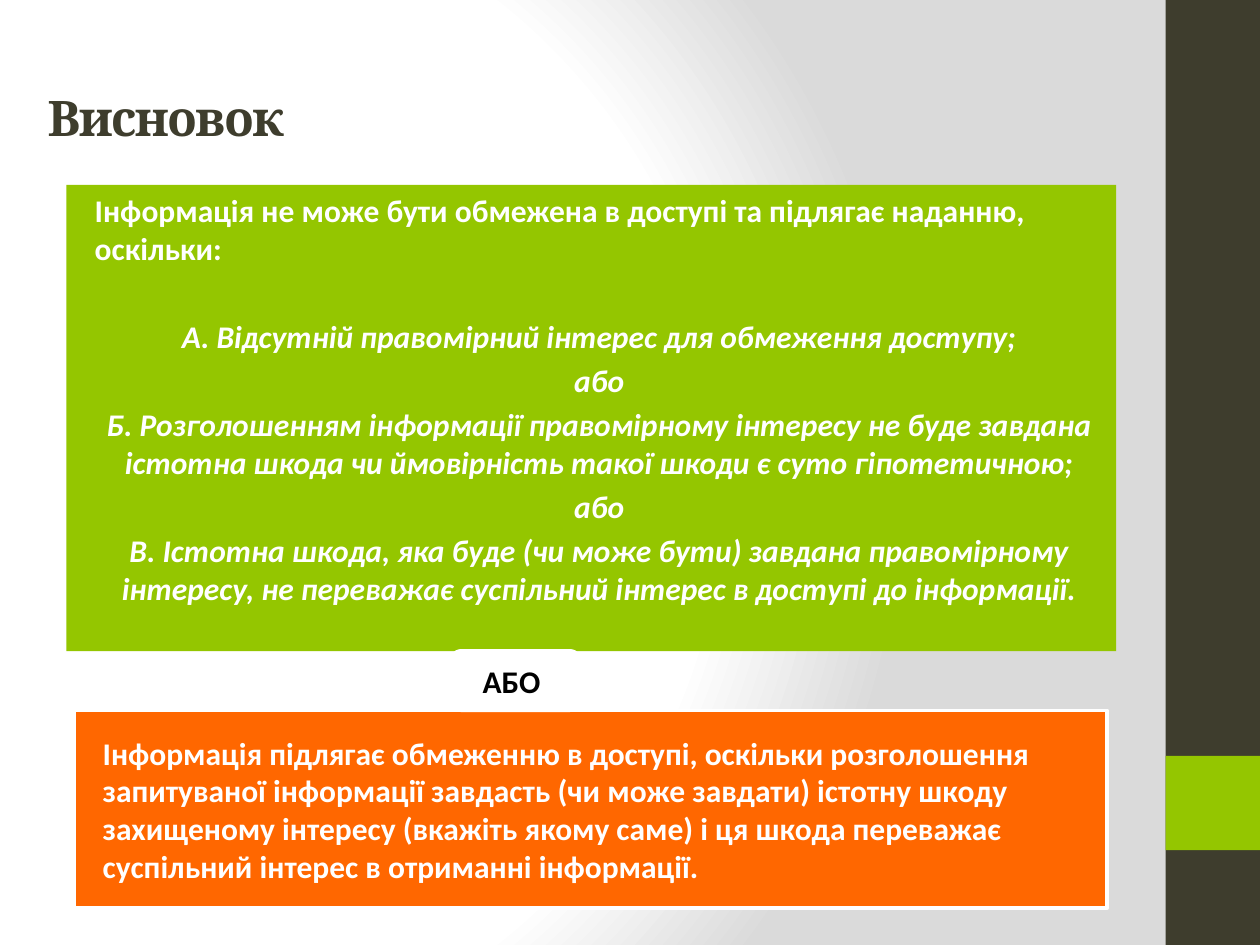
"""Build the conclusion slide on restricting access to information."""
import pptx
import pptx.dml.color
import pptx.enum.shapes
import pptx.enum.text
import pptx.oxml
import pptx.util

Cm = pptx.util.Cm
ALIGN = pptx.enum.text.PP_ALIGN
ANCHOR = pptx.enum.text.MSO_ANCHOR
SHAPE = pptx.enum.shapes.MSO_SHAPE
DARK, GREEN, ORANGE, WHITE, BLACK = "3E3D2D", "94C600", "FF6700", "FFFFFF", "000000"


def paint(fill, colour):
    if colour is None:
        fill.background()
    else:
        fill.solid()
        fill.fore_color.rgb = pptx.dml.color.RGBColor.from_string(colour)


def add_text(box, text, font="Calibri", size=18, colour=WHITE, italic=False,
             align=ALIGN.LEFT, before=0, indent=0.32, tracking=0, anchor=ANCHOR.MIDDLE):
    frame = box.text_frame
    frame.word_wrap = True
    frame.vertical_anchor = anchor
    para = frame.add_paragraph() if frame.text else frame.paragraphs[0]
    para.alignment = align
    para.space_before = pptx.util.Pt(before)
    properties = para._p.get_or_add_pPr()
    properties.set("marL", str(Cm(indent)))
    properties.set("indent", "0")
    span = para.add_run()
    span.text = text
    span.font.name = font
    span.font.size = pptx.util.Pt(size)
    span.font.bold = True
    span.font.italic = italic
    paint(span.font.fill, colour)
    if tracking:
        span.font._element.set("spc", str(tracking))


deck = pptx.Presentation()
deck.slide_width, deck.slide_height = Cm(25.4), Cm(19.05)
page = deck.slides.add_slide(deck.slide_layouts[6])

page.background.fill.gradient()
namespace = "http://schemas.openxmlformats.org/drawingml/2006/main"
gradient = page.element.find(".//{%s}gradFill" % namespace)
stops = "".join(
    f'<a:gs pos="{position * 1000}"><a:srgbClr val="{colour}"/></a:gs>'
    for position, colour in [(0, WHITE), (75, WHITE), (100, "DADADA")])
gradient.getparent().replace(gradient, pptx.oxml.parse_xml(
    f'<a:gradFill xmlns:a="{namespace}" rotWithShape="1"><a:gsLst>{stops}</a:gsLst>'
    '<a:path path="circle"><a:fillToRect l="20000" t="50000" r="100000" b="50000"/>'
    '</a:path></a:gradFill>'))

boxes = {}
for name, kind, place, fill, line in [
    ("sidebar", SHAPE.RECTANGLE, (23.5, 0, 1.9, 19.05), DARK, None),
    ("accent", SHAPE.RECTANGLE, (23.5, 15.24, 1.9, 1.9), GREEN, None),
    ("open", SHAPE.RECTANGLE, (1.34, 3.73, 21.16, 9.4), GREEN, None),
    ("restricted", SHAPE.RECTANGLE, (1.5, 14.32, 20.82, 3.99), ORANGE, WHITE),
    ("or", SHAPE.ROUNDED_RECTANGLE, (9.1, 13.12, 2.59, 1.2), None, WHITE),
]:
    box = page.shapes.add_shape(kind, *map(Cm, place))
    box.shadow.inherit = False
    paint(box.fill, fill)
    paint(box.line.fill, line)
    if line:
        box.line.width = pptx.util.Pt(2)
    boxes[name] = box

title = page.shapes.add_textbox(Cm(0.71), Cm(0.76), Cm(23.01), Cm(3.18))
add_text(title, "Висновок", font="Cambria", size=28, colour=DARK, indent=0, tracking=-100)
add_text(boxes["open"], "Інформація не може бути обмежена в доступі та підлягає "
         "наданню, оскільки:", before=3.6, anchor=ANCHOR.TOP)
for text, before in [
    ("А. Відсутній правомірний інтерес для обмеження доступу;", 28.5),
    ("або", 3.6),
    ("Б. Розголошенням інформації правомірному інтересу не буде завдана істотна "
     "шкода чи ймовірність такої шкоди є суто гіпотетичною;", 3.6),
    ("або", 3.6),
    ("В. Істотна шкода, яка буде (чи може бути) завдана правомірному інтересу, "
     "не переважає суспільний інтерес в доступі до інформації.", 3.6),
]:
    add_text(boxes["open"], text, italic=True, align=ALIGN.CENTER, before=before,
             anchor=ANCHOR.TOP)
add_text(boxes["restricted"], "Інформація підлягає обмеженню в доступі, оскільки "
         "розголошення запитуваної інформації завдасть (чи може завдати) істотну шкоду "
         "захищеному інтересу (вкажіть якому саме) і ця шкода переважає суспільний "
         "інтерес в отриманні інформації.")
add_text(boxes["or"], "АБО", colour=BLACK)

deck.save("out.pptx")
